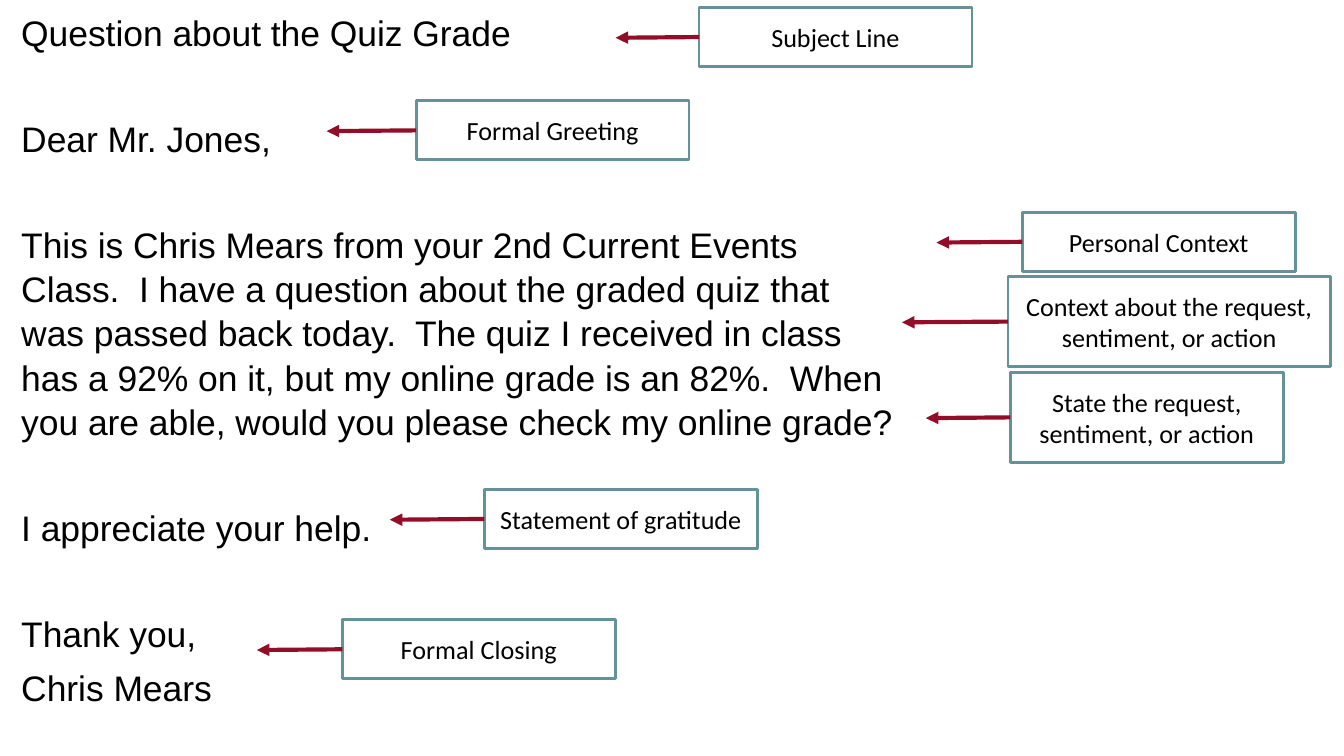
from dataclasses import dataclass

import lxml.etree
import pptx
import pptx.dml.color
import pptx.enum.shapes
import pptx.enum.text
import pptx.oxml.ns
import pptx.util

Pt = pptx.util.Pt
RGBColor = pptx.dml.color.RGBColor


@dataclass(frozen=True)
class Theme:
    text = RGBColor.from_string("000000")
    box_fill = RGBColor.from_string("FFFFFF")
    box_line = RGBColor.from_string("659298")
    arrow = RGBColor.from_string("910D28")
    letter_font = "Arial"
    label_font = "Calibri"
    letter_size = Pt(19)
    label_size = Pt(14)
    box_line_width = Pt(1.5)
    arrow_width = Pt(2.25)
    label_inset = Pt(7.2)


THEME = Theme()
CLOSE_GAP = 5.2
WIDE_GAP = 33.2
BOX_WIDTH = 146.2
ONE_LINE = 31.7
TWO_LINES = 48.2

LETTER = [
    ("Question about the Quiz Grade", 0),
    ("Dear Mr. Jones,", WIDE_GAP),
    ("This is Chris Mears from your 2nd Current Events Class.  I have a question "
     "about the graded quiz that was passed back today.  The quiz I received in "
     "class has a 92% on it, but my online grade is an 82%.  When you are able, "
     "would you please check my online grade?", WIDE_GAP),
    ("I appreciate your help.", WIDE_GAP),
    ("Thank you,", WIDE_GAP),
    ("Chris Mears", CLOSE_GAP),
]

CALLOUTS = [
    ("Formal Greeting", 223, 54, BOX_WIDTH, ONE_LINE, 175),
    ("Personal Context", 547.7, 113.7, BOX_WIDTH, ONE_LINE, 501.7),
    ("Context about the request, sentiment, or action", 540, 148.2, 172.8, TWO_LINES, 483.2),
    ("State the request, sentiment, or action", 541.3, 199.5, BOX_WIDTH, TWO_LINES, 496),
    ("Statement of gratitude", 259.5, 262.2, BOX_WIDTH, ONE_LINE, 208.8),
    ("Subject Line", 374.5, 4, BOX_WIDTH, ONE_LINE, 329.8),
    ("Formal Closing", 183.4, 332, BOX_WIDTH, ONE_LINE, 137.6),
]


def format_text(paragraph, font_name, size):
    for run in paragraph.runs:
        run.font.name = font_name
        run.font.size = size
        run.font.color.rgb = THEME.text


def add_letter(slide):
    shape = slide.shapes.add_textbox(Pt(4.3), Pt(0), Pt(484.6), Pt(392.4))
    text_frame = shape.text_frame
    text_frame.word_wrap = True
    text_frame.margin_top = Pt(4.8)
    text_frame.text = "\n".join(text for text, gap in LETTER)
    for paragraph, (text, gap) in zip(text_frame.paragraphs, LETTER):
        paragraph.space_before = Pt(gap)
        paragraph.line_spacing = 1.04
        format_text(paragraph, THEME.letter_font, THEME.letter_size)


def add_label_box(slide, text, left, top, width, height):
    shape = slide.shapes.add_shape(
        pptx.enum.shapes.MSO_SHAPE.RECTANGLE, Pt(left), Pt(top), Pt(width), Pt(height))
    shape.shadow.inherit = False
    shape.fill.solid()
    shape.fill.fore_color.rgb = THEME.box_fill
    shape.line.color.rgb = THEME.box_line
    shape.line.width = THEME.box_line_width
    text_frame = shape.text_frame
    text_frame.word_wrap = True
    text_frame.vertical_anchor = pptx.enum.text.MSO_ANCHOR.MIDDLE
    text_frame.margin_left = text_frame.margin_right = THEME.label_inset
    text_frame.margin_top = text_frame.margin_bottom = THEME.label_inset
    text_frame.text = text
    paragraph = text_frame.paragraphs[0]
    paragraph.alignment = pptx.enum.text.PP_ALIGN.CENTER
    format_text(paragraph, THEME.label_font, THEME.label_size)
    return shape


def add_arrow(slide, box, tip):
    middle = box.top + box.height // 2
    connector = slide.shapes.add_connector(
        pptx.enum.shapes.MSO_CONNECTOR.STRAIGHT, box.left, middle, Pt(tip), middle + Pt(0.4))
    connector.begin_connect(box, 1)
    connector.line.color.rgb = THEME.arrow
    connector.line.width = THEME.arrow_width
    qn = pptx.oxml.ns.qn
    lxml.etree.SubElement(connector.line._get_or_add_ln(), qn("a:tailEnd"), type="triangle")
    lxml.etree.SubElement(connector._element.spPr, qn("a:effectLst"))


def main():
    presentation = pptx.Presentation()
    presentation.slide_width = Pt(720)
    presentation.slide_height = Pt(405)
    slide = presentation.slides.add_slide(presentation.slide_layouts[6])
    add_letter(slide)
    for text, left, top, width, height, tip in CALLOUTS:
        box = add_label_box(slide, text, left, top, width, height)
        add_arrow(slide, box, tip)
    presentation.save("out.pptx")


if __name__ == "__main__":
    main()
